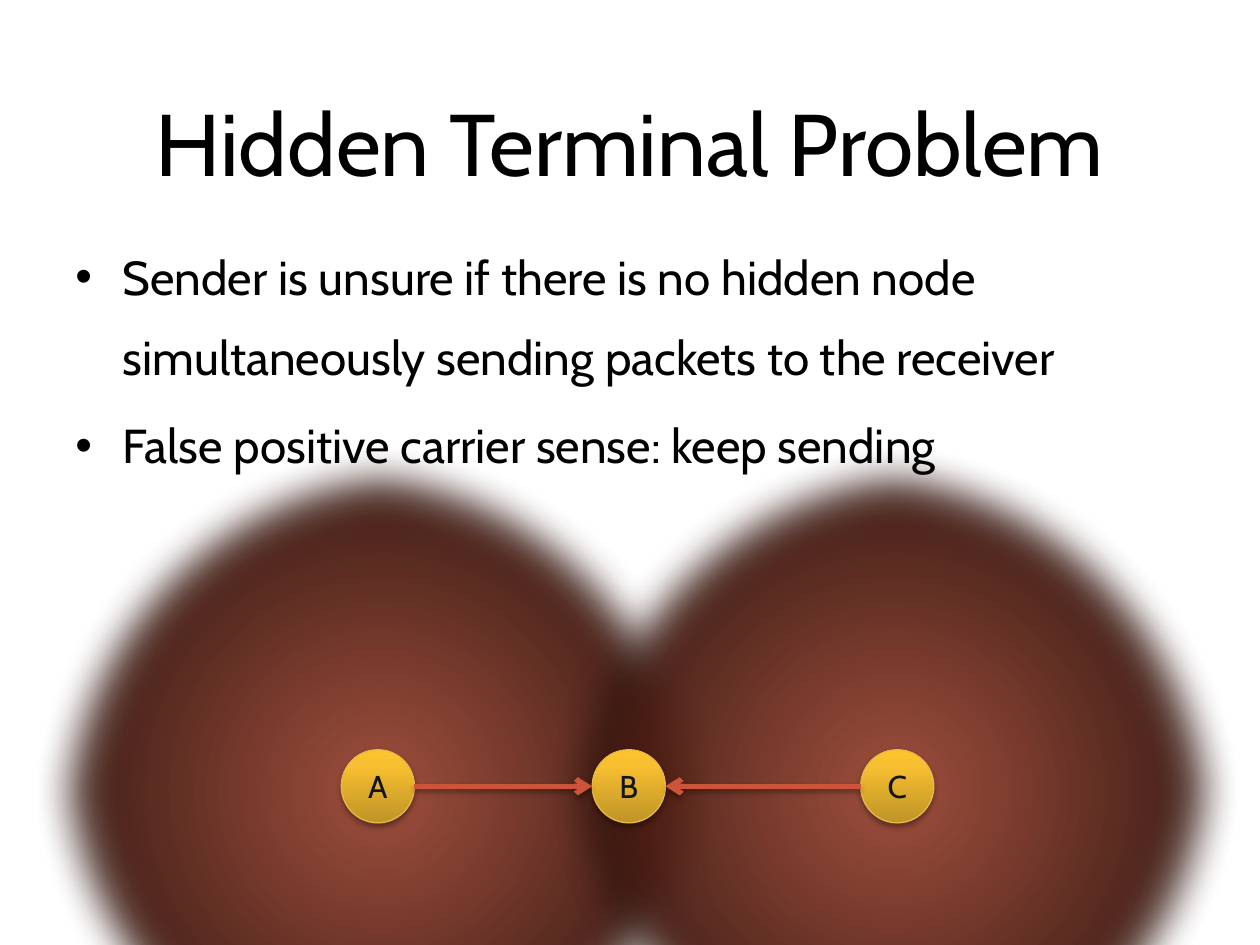
from lxml import etree
from pptx import Presentation
from pptx.dml.color import RGBColor
from pptx.enum.shapes import MSO_CONNECTOR, MSO_SHAPE
from pptx.enum.text import MSO_ANCHOR, PP_ALIGN
from pptx.oxml.ns import qn
from pptx.util import Pt

OVAL = MSO_SHAPE.OVAL
STRAIGHT = MSO_CONNECTOR.STRAIGHT
CENTER = PP_ALIGN.CENTER
LEFT = PP_ALIGN.LEFT
MIDDLE = MSO_ANCHOR.MIDDLE

FONT = "Cabin"
BLACK = RGBColor(0x00, 0x00, 0x00)
INK = RGBColor(0x13, 0x14, 0x1C)
RANGE_RED = RGBColor(0x9C, 0x3D, 0x28)
ARROW_RED = RGBColor(0xCC, 0x54, 0x39)
GOLD_DARK = RGBColor(0xBF, 0x94, 0x26)
GOLD = RGBColor(0xF8, 0xC0, 0x31)
GOLD_LIGHT = RGBColor(0xFD, 0xC3, 0x2D)
GOLD_LINE = RGBColor(0xE7, 0xBA, 0x45)

NODE_SIZE = 41.8
NODE_TOP = 428.4
NODE_LEFTS = {"A": 195, "B": 338.4, "C": 491.8}
RANGE_LEFTS = (17.3, 311)
RANGE_TOP = 250.6
RANGE_WIDTH = 400.3
RANGE_HEIGHT = 401.8


def add_child(parent, tag, **attributes):
    child = etree.SubElement(parent, qn(tag))
    for name, value in attributes.items():
        child.set(name, str(value))
    return child


def add_color(parent, color, opacity):
    node = add_child(parent, "a:srgbClr", val=color)
    if opacity < 100:
        add_child(node, "a:alpha", val=opacity * 1000)


def set_gradient(shape, stops, radial=False):
    gradient = etree.Element(qn("a:gradFill"), rotWithShape="1")
    stop_list = add_child(gradient, "a:gsLst")
    for position, color, opacity in stops:
        stop = add_child(stop_list, "a:gs", pos=position * 1000)
        add_color(stop, color, opacity)
    if radial:
        focus = add_child(gradient, "a:path", path="circle")
        add_child(focus, "a:fillToRect", l=50000, t=50000, r=50000, b=50000)
    else:
        add_child(gradient, "a:lin", ang=270 * 60000, scaled=0)
    shape._element.spPr.insert(2, gradient)


def set_effects(shape, opacity, distance, soft_edge=0):
    effects = add_child(shape._element.spPr, "a:effectLst")
    shadow = add_child(effects, "a:outerShdw", blurRad=Pt(3.1), dist=Pt(distance),
                       dir=90 * 60000, rotWithShape=0)
    add_color(shadow, BLACK, opacity)
    if soft_edge:
        add_child(effects, "a:softEdge", rad=Pt(soft_edge))


def write(para, text, size, color=BLACK, align=LEFT):
    para.alignment = align
    span = para.add_run()
    span.text = text
    span.font.name = FONT
    span.font.size = Pt(size)
    span.font.color.rgb = color


def set_bullet(para, indent):
    para.line_spacing = 1.4
    para.space_before = Pt(5)
    properties = para._p.get_or_add_pPr()
    properties.set("marL", str(Pt(indent)))
    properties.set("indent", str(-Pt(indent)))
    add_child(properties, "a:buFont", typeface="Arial")
    add_child(properties, "a:buChar", char="•")


def add_text_box(page, left, top, width, height):
    box = page.shapes.add_textbox(Pt(left), Pt(top), Pt(width), Pt(height))
    box.text_frame.word_wrap = True
    box.text_frame.vertical_anchor = MIDDLE
    return box.text_frame


def add_title(page, text):
    frame = add_text_box(page, 36, 36, 648, 90)
    write(frame.paragraphs[0], text, size=50, align=CENTER)


def add_bullets(page, items):
    frame = add_text_box(page, 36, 122.4, 648, 154)
    for index, item in enumerate(items):
        para = frame.add_paragraph() if index else frame.paragraphs[0]
        set_bullet(para, indent=27)
        write(para, item, size=27.2)


def add_range(page, left):
    shape = page.shapes.add_shape(OVAL, Pt(left), Pt(RANGE_TOP),
                                  Pt(RANGE_WIDTH), Pt(RANGE_HEIGHT))
    set_gradient(shape, [(0, RANGE_RED, 84), (100, BLACK, 100)], radial=True)
    shape.line.fill.background()
    set_effects(shape, opacity=38, distance=1.6, soft_edge=25)


def add_node(page, label, left):
    shape = page.shapes.add_shape(OVAL, Pt(left), Pt(NODE_TOP), Pt(NODE_SIZE), Pt(NODE_SIZE))
    set_gradient(shape, [(0, GOLD_DARK, 100), (80, GOLD, 100), (100, GOLD_LIGHT, 100)])
    shape.line.color.rgb = GOLD_LINE
    shape.line.width = Pt(0.75)
    set_effects(shape, opacity=35, distance=1.8)
    shape.text_frame.vertical_anchor = MIDDLE
    write(shape.text_frame.paragraphs[0], label, size=18, color=INK, align=CENTER)


def add_arrow(page, start, end):
    middle = Pt(NODE_TOP + NODE_SIZE / 2)
    arrow = page.shapes.add_connector(STRAIGHT, Pt(start), middle, Pt(end), middle)
    arrow.line.color.rgb = ARROW_RED
    arrow.line.width = Pt(3)
    add_child(arrow.line._get_or_add_ln(), "a:tailEnd", type="arrow")
    set_effects(arrow, opacity=35, distance=1.8)


def main():
    deck = Presentation()
    deck.slide_width, deck.slide_height = Pt(720), Pt(540)
    page = deck.slides.add_slide(deck.slide_layouts[6])
    add_title(page, "Hidden Terminal Problem")
    add_bullets(page, [
        "Sender is unsure if there is no hidden node simultaneously sending packets to the receiver",
        "False positive carrier sense: keep sending",
    ])
    for left in RANGE_LEFTS:
        add_range(page, left)
    for label, left in NODE_LEFTS.items():
        add_node(page, label, left)
    add_arrow(page, NODE_LEFTS["A"] + NODE_SIZE, NODE_LEFTS["B"])
    add_arrow(page, NODE_LEFTS["C"], NODE_LEFTS["B"] + NODE_SIZE)
    deck.save("out.pptx")


if __name__ == "__main__":
    main()
